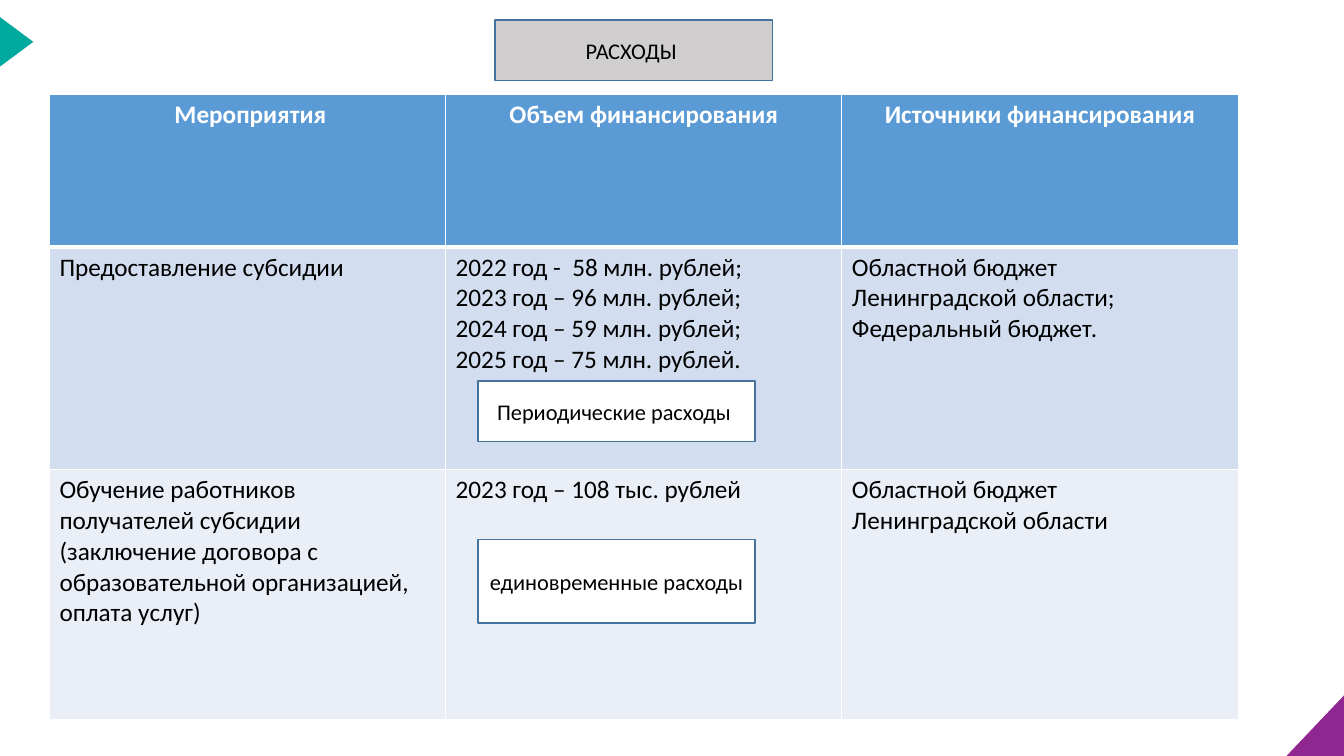
import pptx
import pptx.dml.color
import pptx.enum.shapes
import pptx.enum.text
import pptx.oxml
import pptx.oxml.ns
import pptx.util

Inches = pptx.util.Inches
Pt = pptx.util.Pt
RGBColor = pptx.dml.color.RGBColor
Alignment = pptx.enum.text.PP_ALIGN
Anchor = pptx.enum.text.MSO_ANCHOR

WHITE = RGBColor(0xFF, 0xFF, 0xFF)
BLACK = RGBColor(0x00, 0x00, 0x00)
TEAL = RGBColor(0x00, 0xA9, 0x9D)
PURPLE = RGBColor(0x90, 0x27, 0x90)
GRAY = RGBColor(0xD0, 0xCE, 0xCE)
OUTLINE = RGBColor(0x43, 0x73, 0x9E)
HEADER_BLUE = RGBColor(0x5B, 0x9B, 0xD5)
ROW_BLUE = RGBColor(0xD2, 0xDE, 0xEF)
ROW_PALE = RGBColor(0xEA, 0xEF, 0xF7)

HEADERS = [" Мероприятия", "Объем финансирования", "Источники финансирования"]
SUBSIDY = [
    "Предоставление субсидии",
    "2022 год -  58 млн. рублей;\n2023 год – 96 млн. рублей;\n"
    "2024 год – 59 млн. рублей;\n2025 год – 75 млн. рублей.",
    "Областной бюджет Ленинградской области;\nФедеральный бюджет.",
]
TRAINING = [
    "Обучение работников получателей субсидии (заключение договора с "
    "образовательной организацией, оплата услуг)",
    "2023 год – 108 тыс. рублей",
    "Областной бюджет Ленинградской области",
]


class SlideBuilder:
    font_name = "Calibri"

    def __init__(self, slide):
        self.slide = slide

    def fill_text(self, text_frame, text, size, color=BLACK, bold=False, alignment=Alignment.LEFT):
        text_frame.text = text
        text_frame.word_wrap = True
        font_format = {"name": self.font_name, "size": Pt(size), "bold": bold}
        for paragraph in text_frame.paragraphs:
            paragraph.alignment = alignment
            for run in paragraph.runs:
                for attribute, value in font_format.items():
                    setattr(run.font, attribute, value)
                run.font.color.rgb = color

    def paint(self, shape, fill, outline=None):
        shape.fill.solid()
        shape.fill.fore_color.rgb = fill
        if outline is None:
            shape.line.fill.background()
        else:
            shape.line.color.rgb = outline
            shape.line.width = Pt(1)

    def format_label(self, shape, text, fill):
        self.paint(shape, fill, OUTLINE)
        self.fill_text(shape.text_frame, text, 16, alignment=Alignment.CENTER)
        shape.text_frame.auto_size = pptx.enum.text.MSO_AUTO_SIZE.NONE
        shape.text_frame.vertical_anchor = Anchor.MIDDLE

    def title(self, text, left, top, width, height):
        title = self.slide.shapes.title
        position = {"left": left, "top": top, "width": width, "height": height}
        for attribute, value in position.items():
            setattr(title, attribute, Inches(value))
        self.format_label(title, text, GRAY)

    def preset(self, kind, left, top, width, height):
        shape = self.slide.shapes.add_shape(
            kind, Inches(left), Inches(top), Inches(width), Inches(height))
        shape.shadow.inherit = False
        return shape

    def label(self, text, left, top, width, height):
        shape = self.preset(pptx.enum.shapes.MSO_SHAPE.RECTANGLE, left, top, width, height)
        self.format_label(shape, text, WHITE)

    def side_arrow(self, left, top, width, height):
        shape = self.preset(
            pptx.enum.shapes.MSO_SHAPE.ISOSCELES_TRIANGLE, left, top, width, height)
        shape.rotation = 90
        self.paint(shape, TEAL)

    def corner(self, points):
        start, *others = [(Inches(x), Inches(y)) for x, y in points]
        builder = self.slide.shapes.build_freeform(*start)
        builder.add_line_segments(others, close=True)
        shape = builder.convert_to_shape()
        shape.shadow.inherit = False
        self.paint(shape, PURPLE)

    def borders(self, cell, widths):
        properties = cell._tc.get_or_add_tcPr()
        for index, (side, width) in enumerate(widths.items()):
            properties.insert(index, pptx.oxml.parse_xml(
                f'<a:ln{side} {pptx.oxml.ns.nsdecls("a")} w="{Pt(width)}">'
                f'<a:solidFill><a:srgbClr val="{WHITE}"/></a:solidFill></a:ln{side}>'))

    def table(self, rows, left, top, column_width, row_heights):
        columns = len(rows[0])
        table = self.slide.shapes.add_table(
            len(rows), columns, Inches(left), Inches(top),
            Inches(column_width * columns), Inches(sum(row_heights))).table
        for column in table.columns:
            column.width = Inches(column_width)
        fills = [HEADER_BLUE, ROW_BLUE, ROW_PALE]
        for row_index, texts in enumerate(rows):
            table.rows[row_index].height = Inches(row_heights[row_index])
            header = row_index == 0
            style = {
                "color": WHITE if header else BLACK,
                "bold": header,
                "alignment": Alignment.CENTER if header else Alignment.LEFT,
            }
            widths = {"L": 1, "R": 1, "T": 3 if row_index == 1 else 1, "B": 3 if header else 1}
            for column_index, text in enumerate(texts):
                cell = table.cell(row_index, column_index)
                self.fill_text(cell.text_frame, text, 18, **style)
                cell.fill.solid()
                cell.fill.fore_color.rgb = fills[row_index]
                self.borders(cell, widths)
        return table


def main():
    presentation = pptx.Presentation()
    presentation.slide_width = Inches(13.33)
    presentation.slide_height = Inches(7.5)
    slide = presentation.slides.add_slide(presentation.slide_layouts[5])
    builder = SlideBuilder(slide)
    builder.side_arrow(-0.08, 0.25, 0.49, 0.33)
    builder.corner([(13.33, 7.5), (12.76, 7.5), (13.33, 6.9)])
    table = builder.table([HEADERS, SUBSIDY, TRAINING], 0.49, 0.94, 3.93, [1.51, 2.21, 2.48])
    table.cell(2, 1).text_frame.paragraphs[0].alignment = Alignment.JUSTIFY
    builder.label("Периодические расходы ", 4.74, 3.78, 2.75, 0.6)
    builder.label("единовременные расходы ", 4.74, 5.35, 2.75, 0.83)
    builder.title("РАСХОДЫ ", 4.91, 0.2, 2.75, 0.6)
    presentation.save("out.pptx")


if __name__ == "__main__":
    main()
